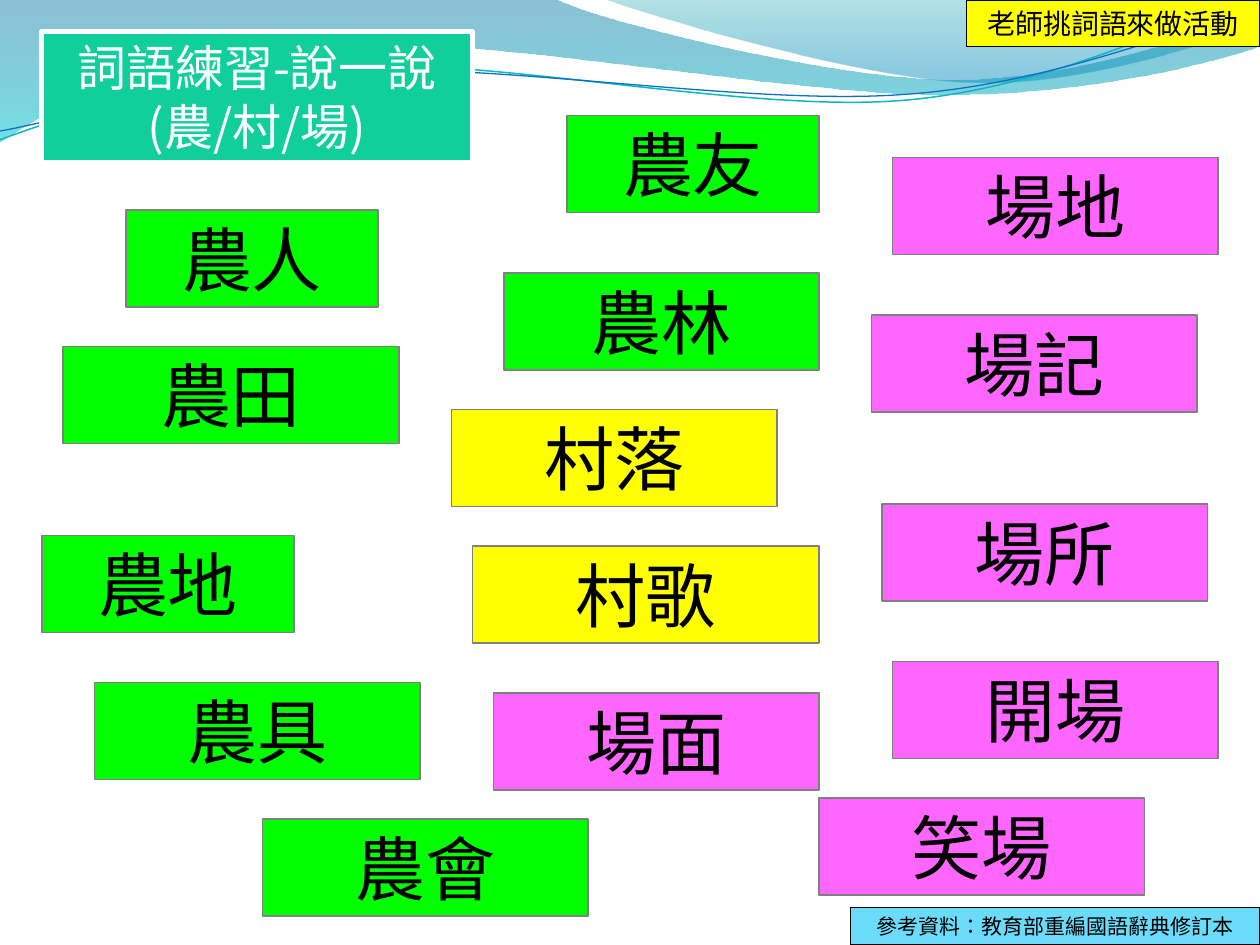
import pptx
import pptx.dml.color
import pptx.enum.lang
import pptx.enum.shapes
import pptx.enum.text
import pptx.oxml.ns
import pptx.util
from lxml import etree
from pptx.util import Inches

qn = pptx.oxml.ns.qn
THEME = {
    "font": "Noto Sans CJK SC",
    "black": "000000", "white": "FFFFFF", "grey": "808080",
    "green": "00FF00", "yellow": "FFFF00", "pink": "FF66FF",
    "teal": "10CF9B", "sky": "6BDBFA",
    "word_size": 40, "title_size": 28, "note_size": 16, "source_size": 12,
}
rgb = pptx.dml.color.RGBColor.from_string

presentation = pptx.Presentation()
presentation.slide_width = Inches(10)
presentation.slide_height = Inches(7.5)
slide = presentation.slides.add_slide(presentation.slide_layouts[6])


def add_curve(start, segments, close):
    """Each segment is one point (straight) or three points (cubic curve)."""
    points = [(Inches(x), Inches(y)) for segment in segments for x, y in segment]
    builder = slide.shapes.build_freeform(Inches(start[0]), Inches(start[1]))
    builder.add_line_segments(points, close=close)
    shape = builder.convert_to_shape()
    shape.shadow.inherit = False
    # Merge each group of three lines into one cubic curve
    lines = iter(list(shape._element.iter(qn("a:lnTo"))))
    for segment in segments:
        group = [next(lines) for _ in segment]
        if len(group) == 3:
            curve = etree.Element(qn("a:cubicBezTo"))
            group[0].addprevious(curve)
            for line in group:
                curve.append(line[0])
                line.getparent().remove(line)
    return shape


def add_box(text, box, fill, size, line=THEME["black"], color=THEME["black"], line_width=0.75):
    shape = slide.shapes.add_shape(pptx.enum.shapes.MSO_SHAPE.RECTANGLE, *map(Inches, box))
    shape.shadow.inherit = False
    shape.fill.solid()
    shape.fill.fore_color.rgb = rgb(fill)
    shape.line.color.rgb = rgb(line)
    shape.line.width = pptx.util.Pt(line_width)
    frame = shape.text_frame
    frame.word_wrap = True
    frame.auto_size = pptx.enum.text.MSO_AUTO_SIZE.SHAPE_TO_FIT_TEXT
    frame.vertical_anchor = pptx.enum.text.MSO_ANCHOR.TOP
    paragraph = frame.paragraphs[0]
    paragraph.alignment = pptx.enum.text.PP_ALIGN.CENTER
    run = paragraph.add_run()
    run.text = text
    run.font.size = pptx.util.Pt(size)
    run.font.color.rgb = rgb(color)
    run.font.name = THEME["font"]
    run.font.language_id = pptx.enum.lang.MSO_LANGUAGE_ID.TRADITIONAL_CHINESE
    # East Asian characters take their own typeface
    etree.SubElement(run.font._element, qn("a:ea"), typeface=THEME["font"])


# Wave bands: start, segments, gradient stops (position, colour, opacity %)
bands = [
    ((0, 0), [
        [(4.4, -0.01)],
        [(4.76, 0.17), (6.64, 0.63), (7.58, 0.63)],
        [(8.53, 0.63), (9.58, 0.26), (10, 0.09)],
        [(10.01, 0.36)],
        [(9.83, 0.44), (8.7, 0.76), (7.46, 0.75)],
        [(6.22, 0.75), (3.82, 0.28), (2.57, 0.34)],
        [(1.29, 0.36), (0.46, 0.83), (-0.01, 1.13)],
        [(0, 0)],
    ], [(0, "0074A1", 45), (1, "00C6CF", 55)]),
    ((4.79, -0.01), [
        [(5.09, 0.11), (6.82, 0.62), (7.69, 0.65)],
        [(8.56, 0.69), (9.61, 0.32), (10, 0.21)],
        [(10, 0)],
        [(4.79, -0.01)],
    ], [(0, "00A1A9", 30), (0.8, "008BBF", 45)]),
]
for start, segments, stops in bands:
    band = add_curve(start, segments, close=True)
    band.line.fill.background()
    band.fill.gradient()
    band.fill.gradient_angle = 270
    for gradient_stop, (position, color, _) in zip(band.fill.gradient_stops, stops):
        gradient_stop.position = position
        gradient_stop.color.rgb = rgb(color)
    for element, (_, _, opacity) in zip(band._element.spPr.iter(qn("a:srgbClr")), stops):
        etree.SubElement(element, qn("a:alpha"), val=str(opacity * 1000))

# Thin wave lines
waves = [
    ((0, 1.11), [
        [(0.48, 0.93), (1.58, 0.57), (2.77, 0.52)],
        [(3.95, 0.47), (5.93, 0.89), (7.13, 0.8)],
        [(8.33, 0.71), (9.38, 0.15), (9.98, -0.02)],
    ], "0AB8BF", 0.85),
    ((0, 1.04), [
        [(0.47, 0.96), (1.64, 0.61), (2.83, 0.56)],
        [(4.03, 0.51), (5.97, 0.84), (7.17, 0.75)],
        [(8.36, 0.67), (9.41, 0.21), (10, 0.06)],
    ], "0F6FC6", 0.75),
]
for start, segments, color, width in waves:
    wave = add_curve(start, segments, close=False)
    wave.fill.background()
    wave.line.color.rgb = rgb(color)
    wave.line.width = pptx.util.Pt(width)

# Word cards: text, colour, then left, top, width in twelfths of an inch
cards = [
    ("農林", "green", 48, 26, 30),
    ("農地", "green", 4, 51, 24),
    ("農人", "green", 12, 20, 24),
    ("農田", "green", 6, 33, 32),
    ("村歌", "yellow", 45, 52, 33),
    ("農具", "green", 9, 65, 31),
    ("笑場", "pink", 78, 76, 31),
    ("農會", "green", 25, 78, 31),
    ("農友", "green", 54, 11, 24),
    ("場地", "pink", 85, 15, 31),
    ("場面", "pink", 47, 66, 31),
    ("村落", "yellow", 43, 39, 31),
    ("場所", "pink", 84, 48, 31),
    ("場記", "pink", 83, 30, 31),
    ("開場", "pink", 85, 63, 31),
]
for word, color, left, top, width in cards:
    add_box(word, (left / 12, top / 12, width / 12, 0.77), THEME[color],
            THEME["word_size"], THEME["grey"])

# Title
add_box("詞語練習-說一說(農/村/場)", (0.33, 0.25, 3.42, 1.04), THEME["teal"],
        THEME["title_size"], THEME["white"], THEME["white"], 3)

# Teacher's note and source
add_box("老師挑詞語來做活動", (7.67, 0, 2.33, 0.37), THEME["yellow"], THEME["note_size"])
add_box("參考資料：教育部重編國語辭典修訂本", (6.75, 7.2, 3.25, 0.3), THEME["sky"],
        THEME["source_size"])

presentation.save("out.pptx")
